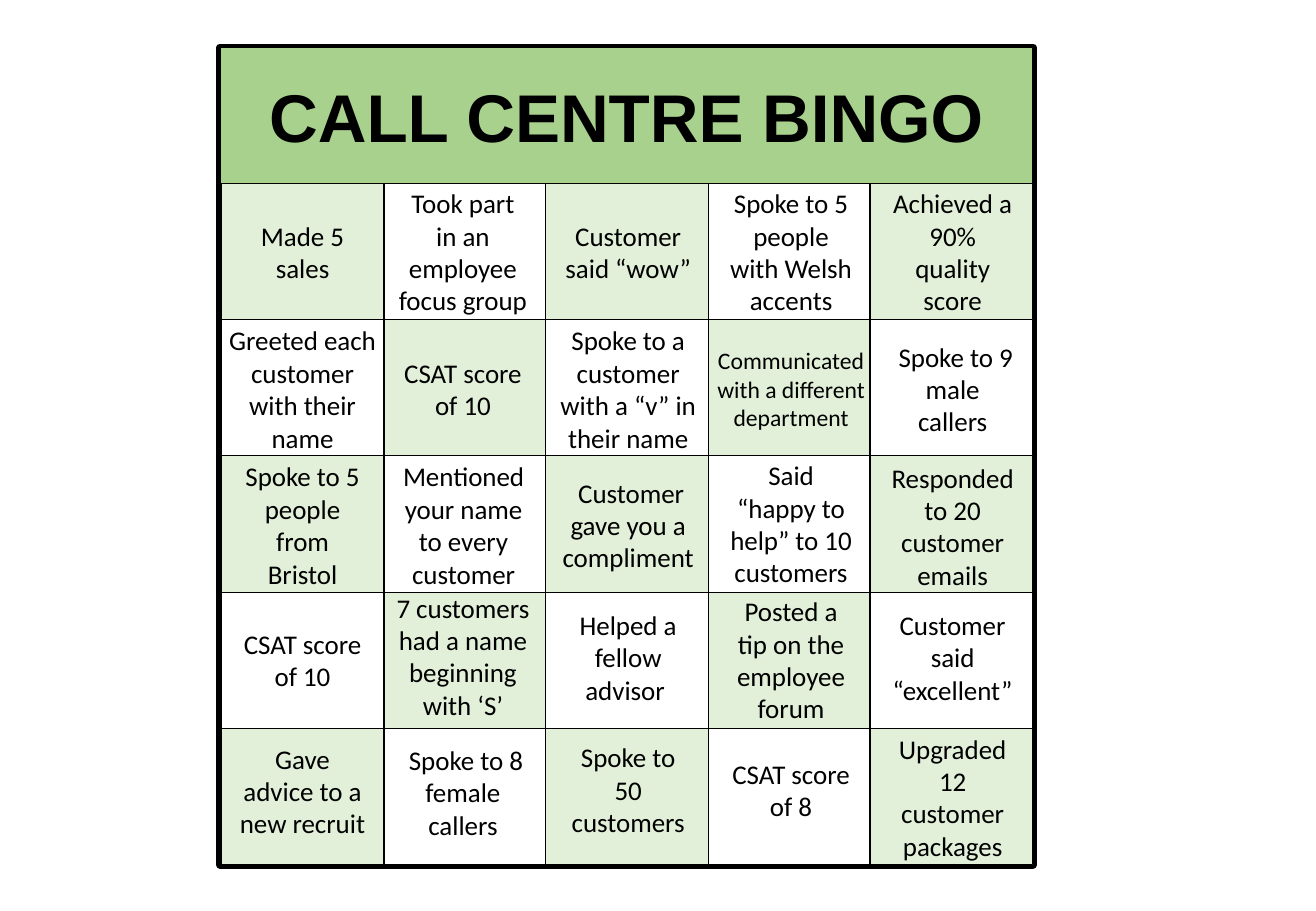
from dataclasses import dataclass

from pptx import Presentation
from pptx.dml.color import RGBColor as Rgb
from pptx.enum.shapes import MSO_SHAPE as Kind
from pptx.enum.text import MSO_ANCHOR as Anchor, PP_ALIGN as Align
from pptx.util import Emu, Pt

SCALE = 9144  # EMU in one px, 100 px to the inch


@dataclass(frozen=True)
class Theme:
    ink: str = "000000"
    head: str = "A9D18E"
    tint: str = "E2F0D9"
    plain: str = "FFFFFF"
    title: int = 40
    body: int = 16
    small: int = 14
    thick: float = 4.5
    thin: float = 0.75
    bold_font: str = "Arial"
    font: str = "Calibri"


class Board:
    def __init__(self, slide, theme):
        self.slide = slide
        self.theme = theme

    def rect(self, x, y, w, h, fill=None, line=None):
        box = self.slide.shapes.add_shape(
            Kind.RECTANGLE, *(Emu(n * SCALE) for n in (x, y, w, h)))
        box.shadow.inherit = False
        if fill:
            box.fill.solid()
            box.fill.fore_color.rgb = Rgb.from_string(fill)
        else:
            box.fill.background()
        box.line.color.rgb = Rgb.from_string(self.theme.ink)
        box.line.width = Pt(line or self.theme.thin)
        return box

    def put_text(self, box, text, size, font, bold=False, wrap=True):
        frame = box.text_frame
        frame.word_wrap = wrap
        frame.vertical_anchor = Anchor.MIDDLE
        para = frame.paragraphs[0]
        para.alignment = Align.CENTER
        run = para.add_run()
        run.text = text
        run.font.size = Pt(size)
        run.font.name = font
        run.font.bold = bold
        run.font.color.rgb = Rgb.from_string(self.theme.ink)

    def label(self, mid, top, text, wide, size):
        """Place a text box centred on the x value mid."""
        box = self.slide.shapes.add_textbox(
            *(Emu(n * SCALE) for n in (mid - wide // 2, top, wide, TALL)))
        self.put_text(box, text, size, self.theme.font)


LEFT, TOP, WIDE, HIGH = 181, 39, 669, 673
HEAD = 112
COUNT = 5
TALL = 118
MIDS = (249, 381, 517, 651, 784)

# Each square: text, top of its label, width of its label
SQUARES = (
    (("Made 5 sales", 148, 124),
     ("Took part in an employee focus group", 148, 126),
     ("Customer said “wow”", 148, 124),
     ("Spoke to 5 people with Welsh accents", 148, 124),
     ("Achieved a 90% quality score", 148, 124)),
    (("Greeted each customer with their name", 261, 142),
     ("CSAT score of 10", 261, 124),
     ("Spoke to a customer with a “v” in their name", 261, 132),
     ("Communicated with a different department", 261, 142),
     (" Spoke to 9 male callers", 261, 124)),
    (("Spoke to 5 people from Bristol", 373, 124),
     ("Mentioned your name to every customer", 373, 135),
     (" Customer gave you a compliment", 373, 142),
     ("Said “happy to help” to 10 customers", 372, 124),
     ("Responded to 20 customer emails", 374, 124)),
    (("CSAT score of 10", 484, 124),
     ("7 customers had a name beginning with ‘S’", 481, 142),
     ("Helped a fellow advisor ", 482, 124),
     ("Posted a tip on the employee forum", 484, 124),
     ("Customer said “excellent”", 482, 124)),
    (("Gave advice to a new recruit", 592, 124),
     (" Spoke to 8 female callers", 593, 124),
     ("Spoke to 50 customers", 591, 124),
     ("CSAT score of 8", 591, 124),
     ("Upgraded 12 customer packages", 597, 124)),
)


def edges(start, end):
    """Split a span into equal parts and return all its edges."""
    return [round(start + (end - start) * i / COUNT) for i in range(COUNT + 1)]


def main():
    deck = Presentation()
    deck.slide_width, deck.slide_height = Emu(1083 * SCALE), Emu(750 * SCALE)
    theme = Theme()
    board = Board(deck.slides.add_slide(deck.slide_layouts[6]), theme)

    board.rect(LEFT, TOP, WIDE, HIGH, line=theme.thick)
    cols = edges(LEFT + 1, LEFT + WIDE)
    rows = edges(TOP + HEAD, TOP + HIGH)
    for r in range(COUNT):
        for c in range(COUNT):
            fill = theme.plain if (r + c) % 2 else theme.tint
            board.rect(cols[c], rows[r], cols[c + 1] - cols[c],
                       rows[r + 1] - rows[r], fill)

    head = board.rect(LEFT, TOP, WIDE, HEAD, theme.head)
    board.put_text(head, "CALL CENTRE BINGO", theme.title, theme.bold_font,
                   bold=True, wrap=False)

    for row in SQUARES:
        for mid, (text, top, wide) in zip(MIDS, row):
            long = text.startswith("Communicated")
            board.label(mid, top, text, wide,
                        theme.small if long else theme.body)

    deck.save("out.pptx")


if __name__ == "__main__":
    main()
